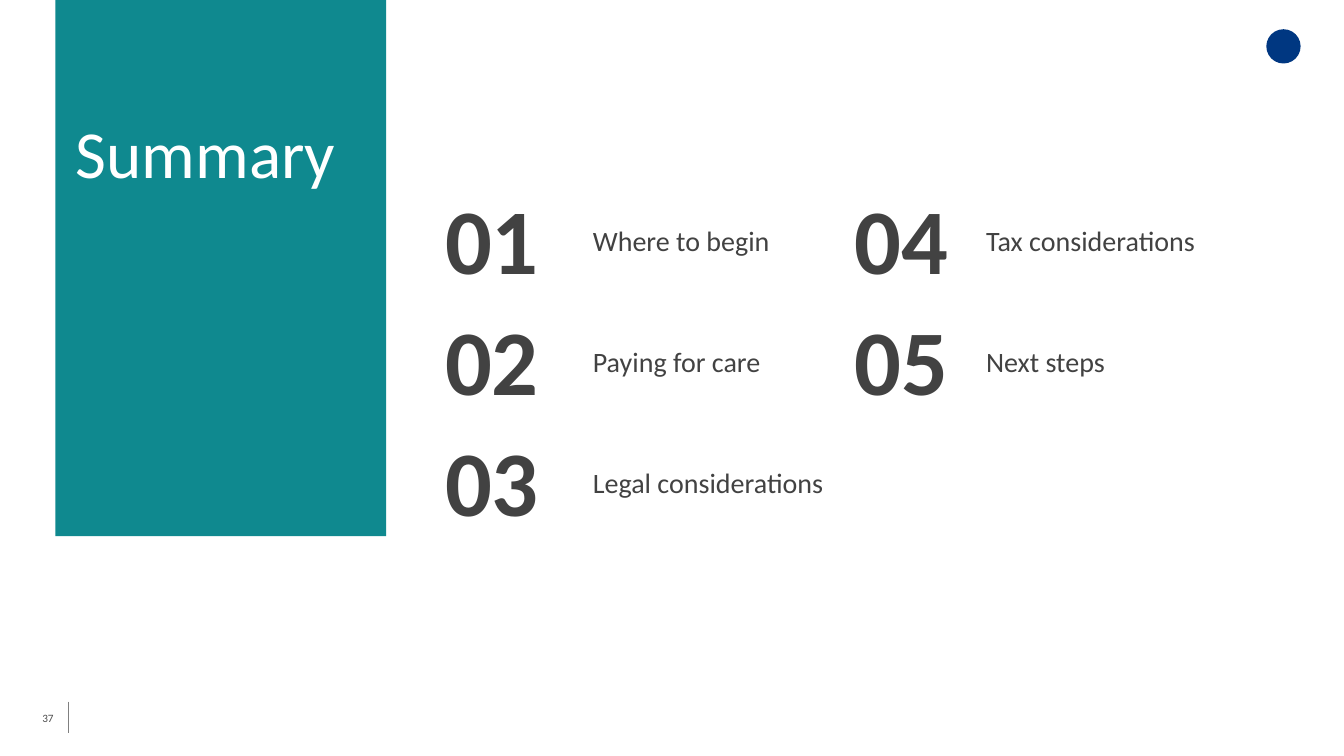
from dataclasses import dataclass

from lxml import etree
from pptx import Presentation
from pptx.dml.color import RGBColor
from pptx.enum import shapes, text
from pptx.oxml.ns import qn
from pptx.util import Inches, Pt


@dataclass(frozen=True)
class Theme:
    font: str = "Calibri"
    teal: str = "0F898F"
    navy: str = "003781"
    white: str = "FFFFFF"
    ink: str = "424242"
    muted: str = "4D4D4D"
    rule: str = "808080"
    title: int = 48
    number: int = 66
    topic: int = 20
    small: int = 8


THEME = Theme()
TOPICS = ["Where to begin", "Paying for care", "Legal considerations",
          "Tax considerations", "Next steps"]
TOPIC_ROWS = 3
TABLE_ROWS = 4
ROW_HEIGHT = 1.09
COLUMN_WIDTHS = [1.6, 2.62, 1.28, 2.9]


def color(value):
    return RGBColor.from_string(value)


def write(tf, words, size, ink, bold=False, align=text.PP_ALIGN.LEFT, before=0):
    p = tf.paragraphs[0]
    p.alignment = align
    p.space_before = Pt(before)
    r = p.add_run()
    r.text = words
    r.font.name = THEME.font
    r.font.size = Pt(size)
    r.font.bold = bold
    r.font.color.rgb = color(ink)


def set_margins(box, left, top, right, bottom):
    box.margin_left, box.margin_top = Inches(left), Inches(top)
    box.margin_right, box.margin_bottom = Inches(right), Inches(bottom)


def add_title_panel(s, words):
    sp = s.shapes.title
    sp.left, sp.top = Inches(0.55), Inches(0)
    sp.width, sp.height = Inches(3.28), Inches(5.32)
    sp.fill.solid()
    sp.fill.fore_color.rgb = color(THEME.teal)
    tf = sp.text_frame
    tf.word_wrap = True
    tf.auto_size = text.MSO_AUTO_SIZE.NONE
    tf.vertical_anchor = text.MSO_ANCHOR.TOP
    set_margins(tf, 0.2, 1.1, 0.3, 0.05)
    write(tf, words, THEME.title, THEME.white, before=6)


def add_badge(s):
    sp = s.shapes.add_shape(shapes.MSO_SHAPE.OVAL, Inches(12.56), Inches(0.29),
                            Inches(0.34), Inches(0.34))
    sp.shadow.inherit = False
    sp.fill.solid()
    sp.fill.fore_color.rgb = color(THEME.navy)
    sp.line.fill.background()


def add_page_number(s, number):
    line = s.shapes.add_connector(shapes.MSO_CONNECTOR.STRAIGHT, Inches(0.68),
                                  Inches(6.96), Inches(0.68), Inches(7.27))
    line.line.color.rgb = color(THEME.rule)
    line.line.width = Pt(0.75)
    etree.SubElement(line._element.spPr, qn("a:effectLst"))

    sp = s.shapes.add_textbox(Inches(0.42), Inches(6.92), Inches(0.4), Inches(0.4))
    tf = sp.text_frame
    tf.word_wrap = True
    tf.vertical_anchor = text.MSO_ANCHOR.MIDDLE
    set_margins(tf, 0, 0.06, 0, 0.06)
    write(tf, number, THEME.small, THEME.muted)


def add_topic_table(s, topics):
    frame = s.shapes.add_table(TABLE_ROWS, len(COLUMN_WIDTHS), Inches(4.08), Inches(1.8),
                               Inches(sum(COLUMN_WIDTHS)), Inches(TABLE_ROWS * ROW_HEIGHT))
    table = frame.table
    table.first_row = table.horz_banding = False
    for column, width in zip(table.columns, COLUMN_WIDTHS):
        column.width = Inches(width)
    for cell in table.iter_cells():
        cell.fill.background()
        cell.vertical_anchor = text.MSO_ANCHOR.MIDDLE

    # Topics run down the first pair of columns, then the second
    for i, topic in enumerate(topics):
        pair, row = divmod(i, TOPIC_ROWS)
        number_cell = table.cell(row, 2 * pair)
        topic_cell = table.cell(row, 2 * pair + 1)
        write(number_cell.text_frame, f"{i + 1:02}", THEME.number, THEME.ink,
              bold=True, align=text.PP_ALIGN.CENTER)
        set_margins(topic_cell, 0.2, 0.05, 0.1, 0.05)
        write(topic_cell.text_frame, topic, THEME.topic, THEME.ink)


def main():
    prs = Presentation()
    prs.slide_width, prs.slide_height = Inches(13.33), Inches(7.5)
    s = prs.slides.add_slide(prs.slide_layouts[5])

    # Page furniture
    add_badge(s)
    add_page_number(s, "37")

    # Content
    add_title_panel(s, "Summary")
    add_topic_table(s, TOPICS)

    prs.save("out.pptx")


if __name__ == "__main__":
    main()
